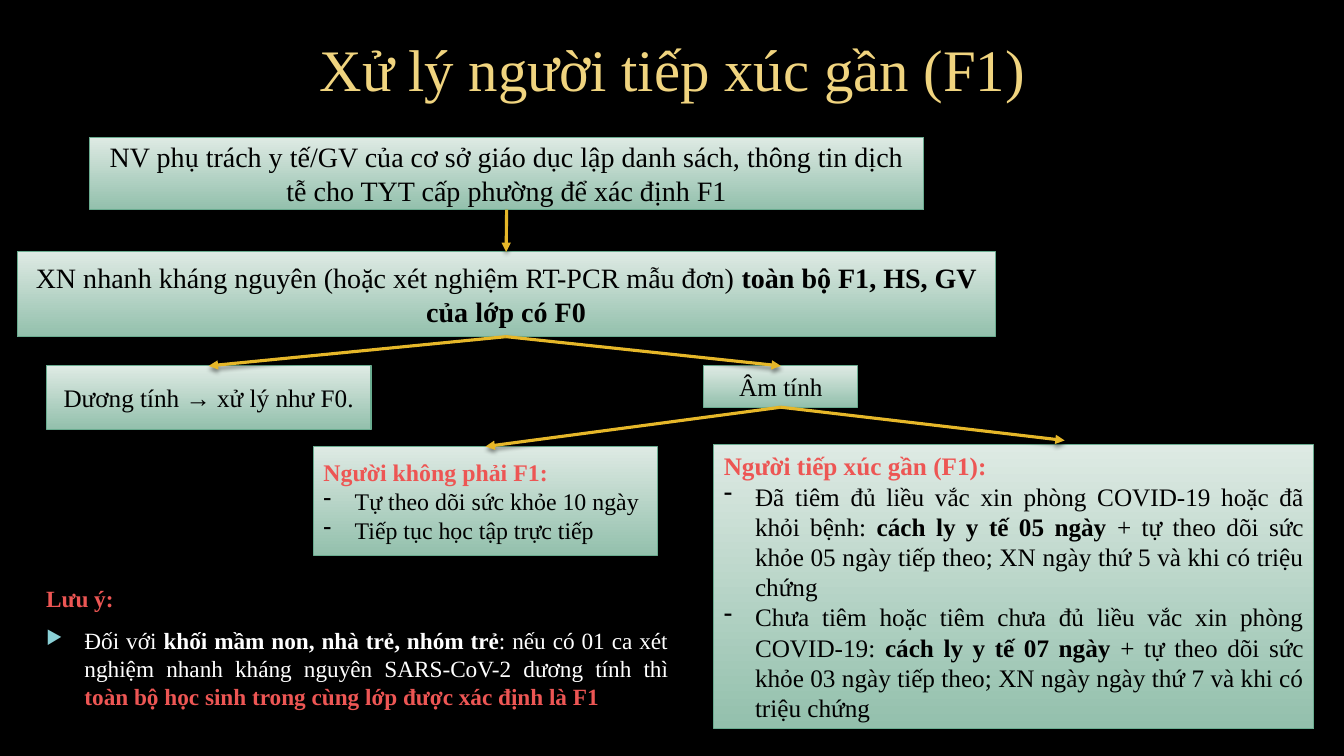
from pptx import Presentation
from pptx.dml.color import RGBColor
from pptx.enum.shapes import MSO_CONNECTOR, MSO_SHAPE
from pptx.enum.text import MSO_ANCHOR, PP_ALIGN
from pptx.oxml import parse_xml
from pptx.oxml.ns import nsdecls
from pptx.util import Inches, Pt

CENTER, JUSTIFY = PP_ALIGN.CENTER, PP_ALIGN.JUSTIFY
TOP_ANCHOR, MIDDLE_ANCHOR = MSO_ANCHOR.TOP, MSO_ANCHOR.MIDDLE
RECTANGLE, STRAIGHT = MSO_SHAPE.RECTANGLE, MSO_CONNECTOR.STRAIGHT
TOP, BOTTOM = 0, 2

THEME = {
    "font": "Times New Roman",
    "background": "000000", "title": "F0D47F", "ink": "000000", "light": "FFFFFF",
    "accent": "ED5654", "marker": "8AD0D6", "arrow": "E6B729",
    "box_top": "DEEAE4", "box_bottom": "93C0AC", "box_edge": "6AAC90",
    "title_size": 42, "step_size": 20, "result_size": 18, "contact_size": 17, "note_size": 16.6,
}

PLAIN, BOLD, ACCENT = "plain", "bold", "accent"
DASH = {"char": "-", "indent": 0.31}
ARROWHEAD = {"char": "▶", "indent": 0.38, "color": THEME["marker"], "percent": 80}

TITLE = [(None, [("Xử lý người tiếp xúc gần (F1)", PLAIN)])]
TITLE_PLACE = (0.92, 0.28, 11.5, 1.45)

NOTE = [
    (None, [("Lưu ý:", ACCENT)]),
    (ARROWHEAD, [
        ("Đối với ", PLAIN),
        ("khối mầm non, nhà trẻ, nhóm trẻ", BOLD),
        (": nếu có 01 ca xét nghiệm nhanh kháng nguyên SARS-CoV-2 dương tính thì ", PLAIN),
        ("toàn bộ học sinh trong cùng lớp được xác định là F1", ACCENT),
    ]),
]
NOTE_PLACE = (0.36, 5.75, 6.36, 1.47)

STEPS = {
    "list": ((0.89, 1.36, 8.27, 0.72), "step_size", CENTER, [
        (None, [("NV phụ trách y tế/GV của cơ sở giáo dục lập danh sách, thông tin dịch tễ "
                 "cho TYT cấp phường để xác định F1", PLAIN)]),
    ]),
    "test": ((0.17, 2.5, 9.7, 0.84), "step_size", CENTER, [
        (None, [("XN nhanh kháng nguyên (hoặc xét nghiệm RT-PCR mẫu đơn) ", PLAIN),
                ("toàn bộ F1, HS, GV của lớp có F0", BOLD)]),
    ]),
    "positive": ((0.46, 3.63, 3.22, 0.63), "result_size", CENTER, [
        (None, [("Dương tính → xử lý như F0.", PLAIN)]),
    ]),
    "negative": ((6.98, 3.63, 1.53, 0.41), "result_size", CENTER, [
        (None, [("Âm tính", PLAIN)]),
    ]),
    "close_contact": ((7.08, 4.41, 5.95, 2.82), "result_size", JUSTIFY, [
        (None, [("Người tiếp xúc gần (F1):", ACCENT)]),
        (DASH, [("Đã tiêm đủ liều vắc xin phòng COVID-19 hoặc đã khỏi bệnh: ", PLAIN),
                ("cách ly y tế 05 ngày ", BOLD),
                ("+ tự theo dõi sức khỏe 05 ngày tiếp theo; XN ngày thứ 5 và khi có triệu chứng", PLAIN)]),
        (DASH, [("Chưa tiêm hoặc tiêm chưa đủ liều vắc xin phòng COVID-19: ", PLAIN),
                ("cách ly y tế 07 ngày ", BOLD),
                ("+ tự theo dõi sức khỏe 03 ngày tiếp theo; XN ngày ngày thứ 7 và khi có triệu chứng", PLAIN)]),
    ]),
    "other_contact": ((3.11, 4.43, 3.41, 1.08), "contact_size", JUSTIFY, [
        (None, [("Người không phải F1:", ACCENT)]),
        (DASH, [("Tự theo dõi sức khỏe 10 ngày", PLAIN)]),
        (DASH, [("Tiếp tục học tập trực tiếp", PLAIN)]),
    ]),
}

FLOWS = [
    ("list", "test"),
    ("test", "positive"),
    ("test", "negative"),
    ("negative", "other_contact"),
    ("negative", (10.56, 4.37)),
]


def rgb(value):
    return RGBColor.from_string(value)


def add_bullet(paragraph, char, indent, color=None, percent=None):
    properties = paragraph._p.get_or_add_pPr()
    properties.set("marL", str(Inches(indent)))
    properties.set("indent", str(-Inches(indent)))
    ns = nsdecls("a")
    if color:
        properties.append(parse_xml(f'<a:buClr {ns}><a:srgbClr val="{color}"/></a:buClr>'))
    if percent:
        properties.append(parse_xml(f'<a:buSzPct {ns} val="{percent * 1000}"/>'))
    properties.append(parse_xml(f'<a:buChar {ns} char="{char}"/>'))


def write_text(shape, paragraphs, size, color, align, anchor=MIDDLE_ANCHOR, gap=0):
    frame = shape.text_frame
    frame.word_wrap = True
    frame.vertical_anchor = anchor
    for index, (bullet, runs) in enumerate(paragraphs):
        paragraph = frame.add_paragraph() if index else frame.paragraphs[0]
        if bullet:
            add_bullet(paragraph, **bullet)
        paragraph.alignment = align
        paragraph.space_before = Pt(gap if index else 0)
        for words, style in runs:
            run = paragraph.add_run()
            run.text = words
            run.font.name = THEME["font"]
            run.font.size = Pt(THEME[size])
            run.font.bold = style != PLAIN
            run.font.color.rgb = rgb(THEME["accent" if style == ACCENT else color])


def add_step(slide, place, size, align, paragraphs):
    step = slide.shapes.add_shape(RECTANGLE, *map(Inches, place))
    step.shadow.inherit = False
    step.fill.gradient()
    step.fill.gradient_angle = 270
    for stop, position, color in zip(step.fill.gradient_stops, (0, 1), ("box_top", "box_bottom")):
        stop.position = position
        stop.color.rgb = rgb(THEME[color])
    step.line.color.rgb = rgb(THEME["box_edge"])
    step.line.width = Pt(0.75)
    write_text(step, paragraphs, size, "ink", align)
    return step


def add_flow(slide, steps, source, target):
    end = (0, 0) if target in steps else map(Inches, target)
    flow = slide.shapes.add_connector(STRAIGHT, 0, 0, *end)
    flow.begin_connect(steps[source], BOTTOM)
    if target in steps:
        flow.end_connect(steps[target], TOP)
    flow.line.color.rgb = rgb(THEME["arrow"])
    flow.line.width = Pt(2.25)
    ns = nsdecls("a")
    flow.line._get_or_add_ln().append(parse_xml(f'<a:tailEnd {ns} type="triangle"/>'))
    flow._element.spPr.append(parse_xml(
        f'<a:effectLst {ns}><a:outerShdw blurRad="{Pt(3)}" dist="{Pt(2)}" dir="5400000" rotWithShape="0">'
        f'<a:srgbClr val="{THEME["ink"]}"><a:alpha val="45000"/></a:srgbClr></a:outerShdw></a:effectLst>'))


def main():
    deck = Presentation()
    deck.slide_width, deck.slide_height = Inches(13.33), Inches(7.5)
    slide = deck.slides.add_slide(deck.slide_layouts[6])
    slide.background.fill.solid()
    slide.background.fill.fore_color.rgb = rgb(THEME["background"])

    heading = slide.shapes.add_textbox(*map(Inches, TITLE_PLACE))
    write_text(heading, TITLE, "title_size", "title", CENTER, TOP_ANCHOR)
    note = slide.shapes.add_textbox(*map(Inches, NOTE_PLACE))
    write_text(note, NOTE, "note_size", "light", JUSTIFY, TOP_ANCHOR, gap=10)

    steps = {key: add_step(slide, *step) for key, step in STEPS.items()}
    for source, target in FLOWS:
        add_flow(slide, steps, source, target)
    deck.save("out.pptx")


if __name__ == "__main__":
    main()
